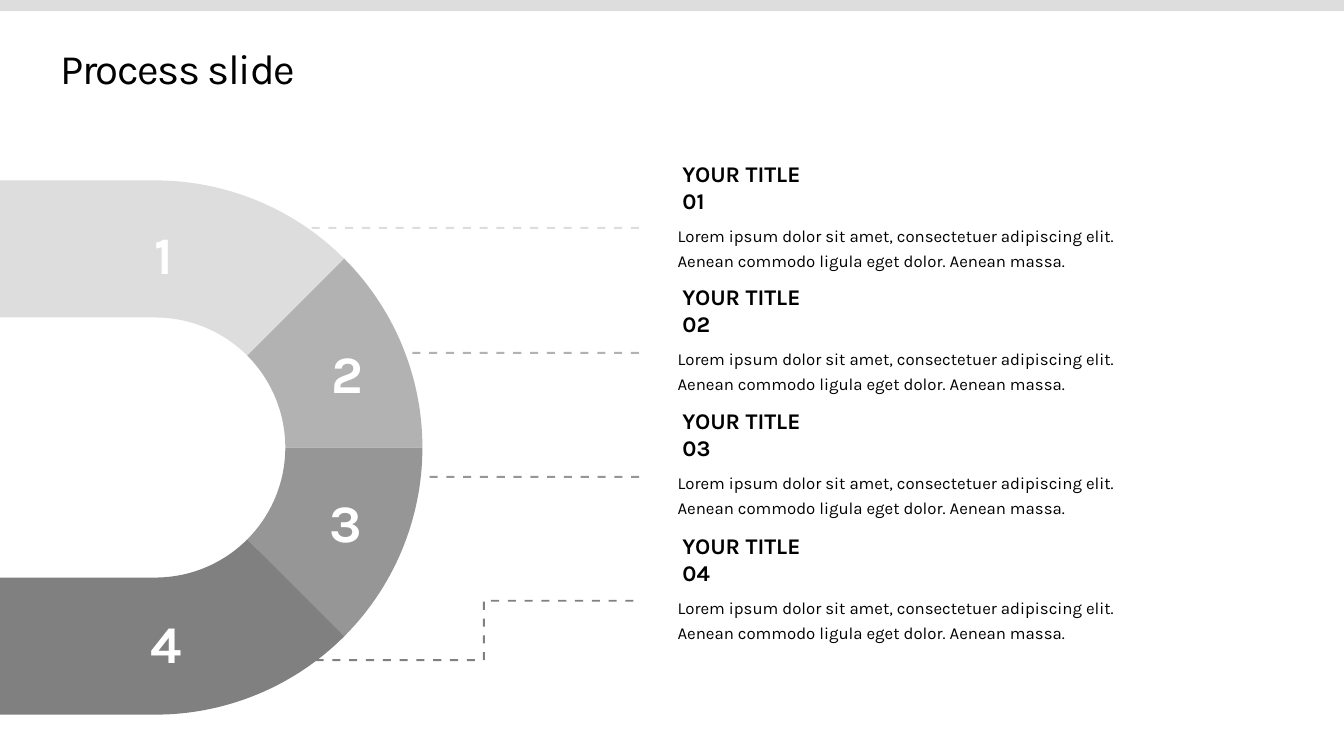
import math

import pptx
import pptx.dml.color
import pptx.enum.shapes
import pptx.enum.text
import pptx.util

Inches = pptx.util.Inches
Pt = pptx.util.Pt
RGBColor = pptx.dml.color.RGBColor
ANCHOR = pptx.enum.text.MSO_ANCHOR
ALIGN = pptx.enum.text.PP_ALIGN

BLACK = RGBColor(0x00, 0x00, 0x00)
WHITE = RGBColor(0xFF, 0xFF, 0xFF)
PALE = RGBColor(0xDD, 0xDD, 0xDD)
LIGHT = RGBColor(0xB2, 0xB2, 0xB2)
MEDIUM = RGBColor(0x96, 0x96, 0x96)
DARK = RGBColor(0x80, 0x80, 0x80)

FONT = "Karla"
BODY = ("Lorem ipsum dolor sit amet, consectetuer adipiscing elit. "
        "Aenean commodo ligula eget dolor. Aenean massa.")

# Bend of the track: centre and radii in inches
CENTRE_X, CENTRE_Y = 1.54, 4.44
OUTER, INNER = 2.65, 1.29

# Dashes in inches
PITCH, DASH, THICKNESS = 1 / 6, 0.08, 0.02


def arc(radius, start, end, steps=30):
    """Points along an arc of the bend, angles in degrees."""
    angles = [math.radians(start + (end - start) * i / steps) for i in range(steps + 1)]
    return [(CENTRE_X + radius * math.cos(a), CENTRE_Y + radius * math.sin(a))
            for a in angles]


def rectangle(left, top, width, height):
    return [(left, top), (left + width, top),
            (left + width, top + height), (left, top + height)]


def dashes_across(left, top, count):
    return [rectangle(left + i * PITCH, top, DASH, THICKNESS) for i in range(count)]


def dashes_down(left, top, count):
    return [rectangle(left, top + i * PITCH, THICKNESS, DASH) for i in range(count)]


class SlideBuilder:
    def __init__(self, slide, font):
        self.slide = slide
        self.font = font

    def paint(self, shape, color):
        shape.shadow.inherit = False
        shape.fill.solid()
        shape.fill.fore_color.rgb = color
        shape.line.fill.background()

    def bar(self, left, top, width, height, color):
        shape = self.slide.shapes.add_shape(
            pptx.enum.shapes.MSO_SHAPE.RECTANGLE,
            Inches(left), Inches(top), Inches(width), Inches(height))
        self.paint(shape, color)

    def outline(self, contours, color):
        contours = [[(Inches(x), Inches(y)) for x, y in contour] for contour in contours]
        builder = self.slide.shapes.build_freeform(*contours[0][0])
        for index, contour in enumerate(contours):
            if index:
                builder.move_to(*contour[0])
            builder.add_line_segments(contour[1:], close=True)
        self.paint(builder.convert_to_shape(), color)

    def text(self, text, left, top, width, height, size, color=BLACK, bold=False,
             anchor=ANCHOR.TOP, align=ALIGN.LEFT, wrap=True, insets=(0.1, 0.05),
             line_spacing=None, tracking=None):
        box = self.slide.shapes.add_textbox(
            Inches(left), Inches(top), Inches(width), Inches(height))
        frame = box.text_frame
        frame.word_wrap = wrap
        frame.vertical_anchor = anchor
        frame.margin_left = frame.margin_right = Inches(insets[0])
        frame.margin_top = frame.margin_bottom = Inches(insets[1])
        paragraph = frame.paragraphs[0]
        paragraph.alignment = align
        if line_spacing:
            paragraph.line_spacing = Pt(line_spacing)
        run = paragraph.add_run()
        run.text = text
        run.font.name = self.font
        run.font.size = Pt(size)
        run.font.bold = bold
        run.font.color.rgb = color
        if tracking:
            run.font._element.set("spc", str(tracking * 100))


def main():
    presentation = pptx.Presentation()
    presentation.slide_width = Inches(13.33)
    presentation.slide_height = Inches(7.5)
    slide = presentation.slides.add_slide(presentation.slide_layouts[6])
    builder = SlideBuilder(slide, FONT)

    # Top band
    builder.bar(0, 0, 13.33, 0.11, PALE)

    # Track: four 45-degree pieces, the outer two with straight ends
    for index, color in enumerate((PALE, LIGHT, MEDIUM, DARK)):
        start = -90 + 45 * index
        outer, inner = arc(OUTER, start, start + 45), arc(INNER, start + 45, start)
        if index == 0:
            outer.insert(0, (0, CENTRE_Y - OUTER))
            inner.append((0, CENTRE_Y - INNER))
        elif index == 3:
            outer.append((0, CENTRE_Y + OUTER))
            inner.insert(0, (0, CENTRE_Y + INNER))
        builder.outline([outer + inner], color)

    # Dashed leaders
    builder.outline(dashes_across(3.09, 2.25, 20), PALE)
    builder.outline(dashes_across(4.09, 3.49, 14), LIGHT)
    builder.outline(dashes_across(4.26, 4.72, 13), MEDIUM)
    builder.outline(dashes_across(4.87, 5.95, 9) + dashes_down(4.79, 5.97, 4)
                    + dashes_across(3.13, 6.54, 10), DARK)

    # Steps
    for number, top in enumerate((2.17, 3.39, 4.62, 5.86), start=1):
        builder.text(BODY, 6.67, top, 4.97, 0.53, 12,
                     insets=(0.05, 0.03), line_spacing=17.5)
        builder.text(f"YOUR TITLE {number:02}", 6.67, top - 0.37, 1.57, 0.37, 16,
                     bold=True, anchor=ANCHOR.BOTTOM)

    # Numbers on the track
    for number, (left, top) in enumerate(
            ((1.39, 2.15), (3.19, 3.33), (3.17, 4.81), (1.39, 6.01)), start=1):
        builder.text(str(number), left, top, 0.47, 0.73, 37.5, WHITE, bold=True,
                     anchor=ANCHOR.MIDDLE, align=ALIGN.CENTER, wrap=False)

    # Title
    builder.text("Process slide", 0.5, 0.35, 12.33, 0.64, 30,
                 anchor=ANCHOR.MIDDLE, tracking=-1)

    presentation.save("out.pptx")


if __name__ == "__main__":
    main()
